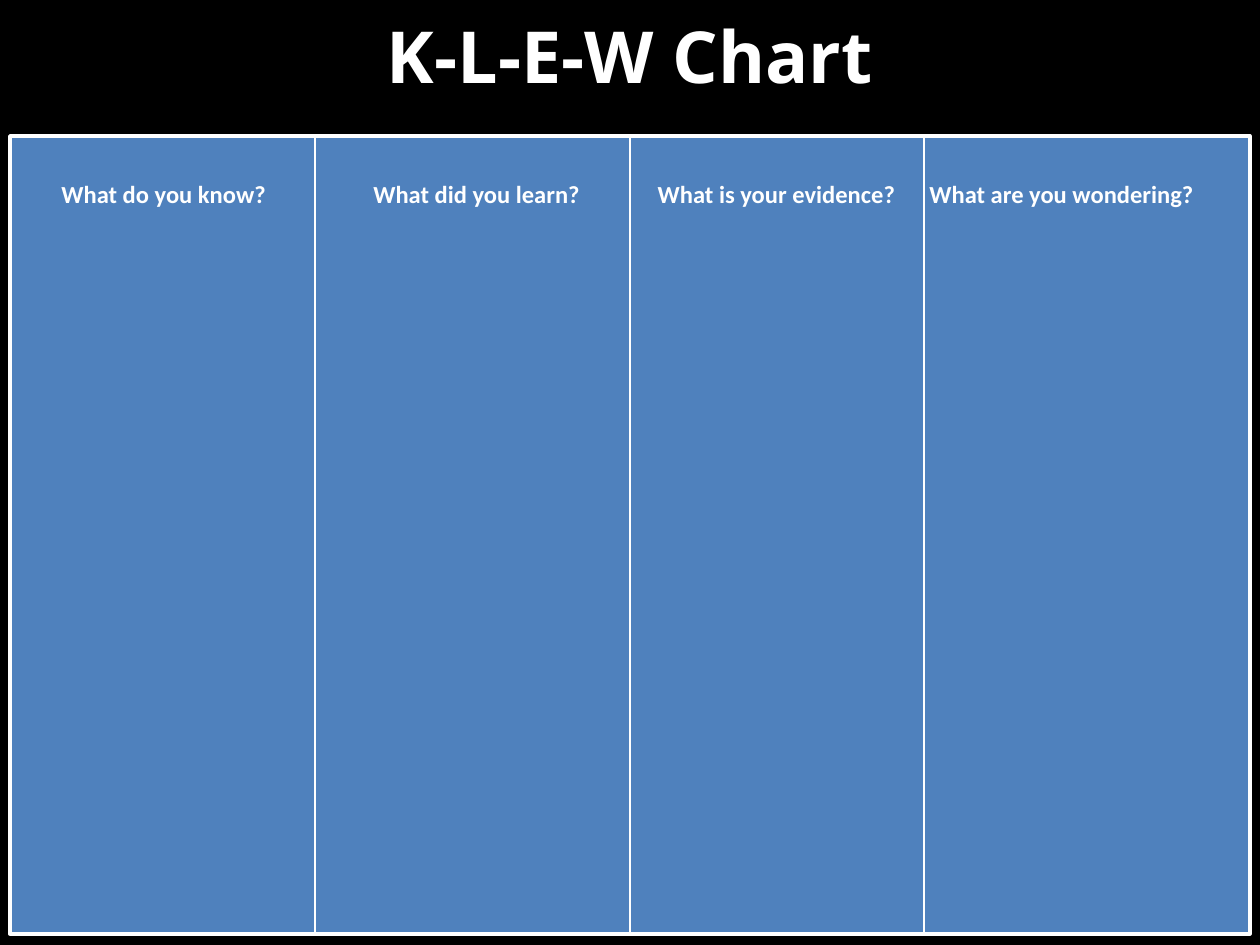
import pptx
import pptx.util
import pptx.dml.color
import pptx.enum.shapes
import pptx.enum.text
import pptx.oxml.ns
import lxml.etree

EMU_PER_PX = 914400 // 126
COLORS = {"background": "000000", "panel": "4F81BD", "light": "FFFFFF"}
ALIGN = pptx.enum.text.PP_ALIGN


def px(length):
    return pptx.util.Emu(length * EMU_PER_PX)


def rgb(name):
    return pptx.dml.color.RGBColor.from_string(COLORS[name])


def write_text(frame, text, *, font="Calibri", size=14, align=ALIGN.LEFT,
               spacing=1.0, after=0):
    frame.word_wrap = True
    frame.auto_size = pptx.enum.text.MSO_AUTO_SIZE.NONE
    frame.vertical_anchor = pptx.enum.text.MSO_ANCHOR.TOP
    frame.text = text
    paragraph = frame.paragraphs[0]
    paragraph.alignment = align
    paragraph.line_spacing = spacing
    paragraph.space_before = pptx.util.Pt(0)
    paragraph.space_after = pptx.util.Pt(after)
    style = paragraph.runs[0].font
    style.name = font
    style.size = pptx.util.Pt(size)
    style.bold = True
    style.color.rgb = rgb("light")


class KlewSlide:
    def __init__(self, deck):
        self.slide = deck.slides.add_slide(deck.slide_layouts[5])
        fill = self.slide.background.fill
        fill.solid()
        fill.fore_color.rgb = rgb("background")

    def outline(self, line, width):
        line.color.rgb = rgb("light")
        line.width = pptx.util.Pt(width)

    def title(self, text, left, top, width, height):
        heading = self.slide.shapes.title
        heading.left, heading.top = px(left), px(top)
        heading.width, heading.height = px(width), px(height)
        heading.text_frame.margin_top = px(2)
        write_text(heading.text_frame, text, font="Noto Sans", size=41,
                   align=ALIGN.CENTER)

    def panel(self, left, top, width, height):
        panel = self.slide.shapes.add_shape(
            pptx.enum.shapes.MSO_SHAPE.RECTANGLE,
            px(left), px(top), px(width), px(height))
        panel.shadow.inherit = False
        panel.fill.solid()
        panel.fill.fore_color.rgb = rgb("panel")
        self.outline(panel.line, 2)
        return panel

    def question(self, text, left, top, width, height, align):
        box = self.slide.shapes.add_textbox(
            px(left), px(top), px(width), px(height))
        write_text(box.text_frame, text, align=align, spacing=1.15, after=10)

    def divider(self, x, top, bottom):
        divider = self.slide.shapes.add_connector(
            pptx.enum.shapes.MSO_CONNECTOR.STRAIGHT,
            px(x), px(top), px(x), px(bottom))
        self.outline(divider.line, 1.5)
        lxml.etree.SubElement(divider.element.spPr,
                              pptx.oxml.ns.qn("a:effectLst"))
        return divider


def main():
    deck = pptx.Presentation()
    deck.slide_width, deck.slide_height = px(1260), px(945)
    klew = KlewSlide(deck)

    left, top, width, height = 10, 136, 1240, 798
    panel = klew.panel(left, top, width, height)

    questions = [
        ("What do you know?", 49, 282, ALIGN.LEFT),
        ("What did you learn?", 361, 267, ALIGN.LEFT),
        ("What is your evidence?", 644, 265, ALIGN.CENTER),
        ("What are you wondering?", 917, 294, ALIGN.LEFT),
    ]
    for text, box_left, box_width, align in questions:
        klew.question(text, box_left, 168, box_width, 39, align)

    middle = left + width // 2
    for x in (315, 924, middle):
        divider = klew.divider(x, top, top + height)
        if x == middle:
            divider.begin_connect(panel, 0)
            divider.end_connect(panel, 2)

    klew.title("K-L-E-W Chart", 63, 10, 1134, 158)
    deck.save("out.pptx")


if __name__ == "__main__":
    main()
